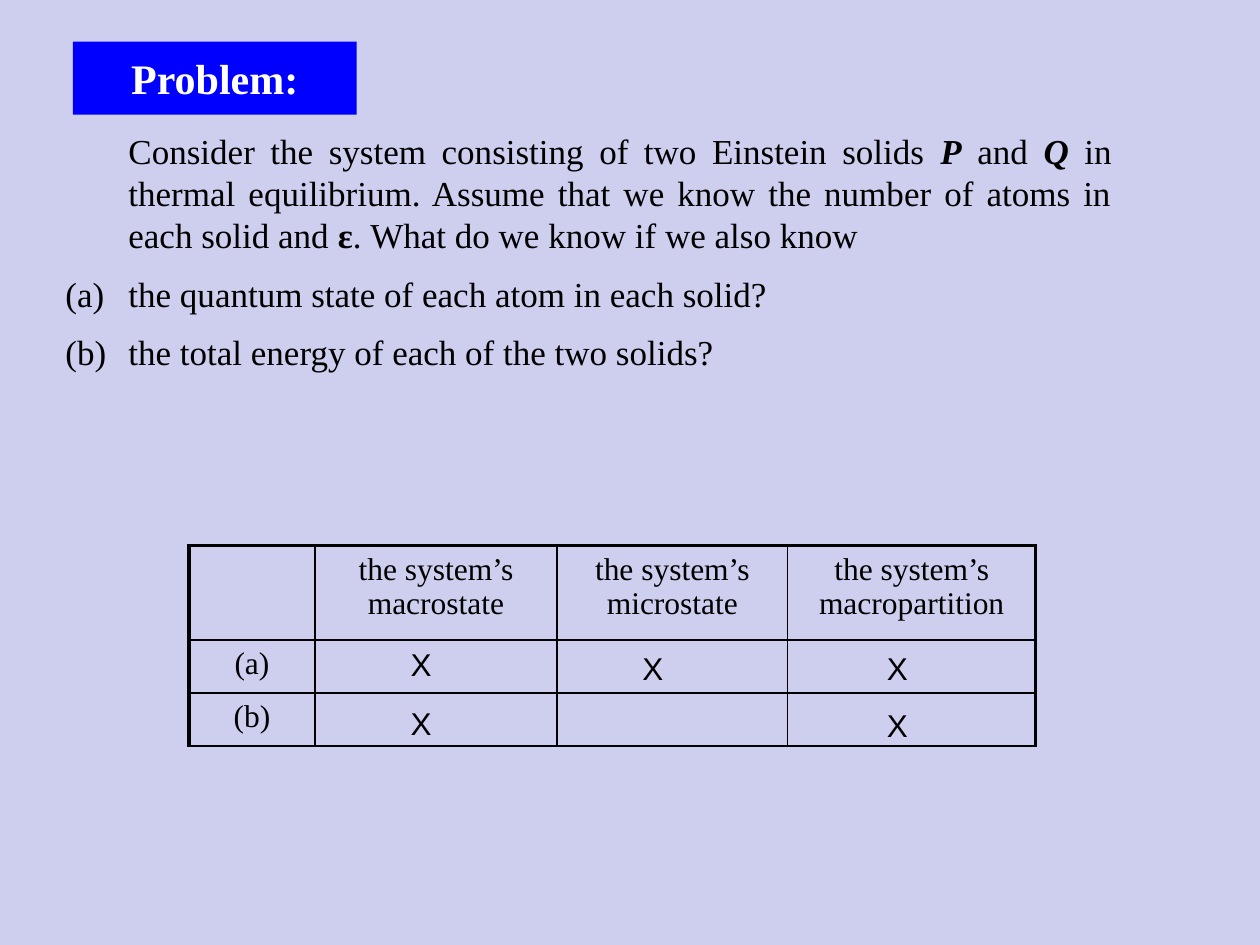
from dataclasses import dataclass

from lxml import etree
from pptx import Presentation
from pptx.dml.color import RGBColor
from pptx.enum.text import MSO_ANCHOR, PP_ALIGN
from pptx.oxml.ns import qn
from pptx.util import Cm, Pt

CENTER, JUSTIFY, LEFT = PP_ALIGN.CENTER, PP_ALIGN.JUSTIFY, PP_ALIGN.LEFT
MIDDLE = MSO_ANCHOR.MIDDLE
TITLE_ONLY = 5


@dataclass(frozen=True)
class Theme:
    background: RGBColor = RGBColor(0xCE, 0xCE, 0xEF)
    banner: RGBColor = RGBColor(0x00, 0x00, 0xFF)
    banner_text: RGBColor = RGBColor(0xFF, 0xFF, 0xFF)
    ink: RGBColor = RGBColor(0x00, 0x00, 0x00)
    serif: str = "Times New Roman"
    sans: str = "Arial"
    title_size: float = 24
    body_size: float = 20
    table_size: float = 18
    outer_line: float = 2.25
    inner_line: float = 1


@dataclass(frozen=True)
class Phrase:
    text: str
    bold: bool = False
    italic: bool = False


@dataclass(frozen=True)
class Mark:
    """Position of one X over the answer grid, in centimetres."""
    left: float
    top: float


THEME = Theme()

INTRO = [
    Phrase("Consider the system consisting of two Einstein solids "),
    Phrase("P", bold=True, italic=True),
    Phrase(" and "),
    Phrase("Q", bold=True, italic=True),
    Phrase(" in thermal equilibrium. Assume that we know the number of atoms"
           " in each solid and "),
    Phrase("ε", bold=True),
    Phrase(". What do we know if we also know"),
]
QUESTIONS = [
    "the quantum state of each atom in each solid?",
    "the total energy of each of the two solids?",
]
ANSWER_GRID = [
    ["", "the system’s macrostate", "the system’s microstate",
     "the system’s macropartition"],
    ["(a)", "", "", ""],
    ["(b)", "", "", ""],
]
COLUMN_WIDTHS = [2.54, 4.88, 4.65, 5.0]
ROW_HEIGHTS = [1.9, 1.07, 1.07]
MARKS = [Mark(8.03, 12.88), Mark(12.7, 12.95), Mark(17.63, 12.95),
         Mark(8.03, 14.07), Mark(17.63, 14.1)]


def style_font(font, size: float, name: str = THEME.serif,
               color: RGBColor = THEME.ink) -> None:
    font.size, font.name = Pt(size), name
    font.color.rgb = color


def add_text_frame(slide, left: float, top: float, width: float, height: float):
    box = slide.shapes.add_textbox(Cm(left), Cm(top), Cm(width), Cm(height))
    box.text_frame.word_wrap = True
    return box.text_frame


def indent(paragraph, hanging: float = 0, numbered: bool = False) -> None:
    properties = paragraph._p.get_or_add_pPr()
    properties.set("marL", str(Cm(1.27)))
    properties.set("indent", str(-Cm(hanging)))
    if numbered:
        etree.SubElement(properties, qn("a:buAutoNum"), type="alphaLcParenBoth")


def set_border(cell, side: str, width: float) -> None:
    line = etree.SubElement(cell._tc.get_or_add_tcPr(), qn(f"a:ln{side}"),
                            w=str(Pt(width)))
    fill = etree.SubElement(line, qn("a:solidFill"))
    etree.SubElement(fill, qn("a:srgbClr"), val=str(THEME.ink))


def add_title(slide) -> None:
    title = slide.shapes.title
    title.left, title.top, title.width, title.height = (
        Cm(1.47), Cm(0.84), Cm(5.72), Cm(1.47))
    title.fill.solid()
    title.fill.fore_color.rgb = THEME.banner
    title.text_frame.text = "Problem:"
    title.text_frame.vertical_anchor = MIDDLE
    heading = title.text_frame.paragraphs[0]
    heading.alignment = CENTER
    font = heading.runs[0].font
    style_font(font, THEME.title_size, color=THEME.banner_text)
    font.bold = True


def add_problem(slide) -> None:
    frame = add_text_frame(slide, 1.07, 2.49, 21.59, 5.99)
    intro = frame.paragraphs[0]
    intro.alignment = JUSTIFY
    indent(intro)
    for phrase in INTRO:
        run = intro.add_run()
        run.text = phrase.text
        style_font(run.font, THEME.body_size)
        run.font.bold, run.font.italic = phrase.bold, phrase.italic
    for text in QUESTIONS:
        question = frame.add_paragraph()
        question.text = text
        question.alignment = JUSTIFY
        question.space_before = Pt(9.5)
        indent(question, hanging=1.27, numbered=True)
        style_font(question.runs[0].font, THEME.body_size)


def add_answer_grid(slide) -> None:
    rows, columns = len(ROW_HEIGHTS), len(COLUMN_WIDTHS)
    grid = slide.shapes.add_table(
        rows, columns, Cm(3.81), Cm(11), Cm(sum(COLUMN_WIDTHS)),
        Cm(sum(ROW_HEIGHTS))).table
    grid.first_row = grid.horz_banding = False
    for column, width in zip(grid.columns, COLUMN_WIDTHS):
        column.width = Cm(width)
    for r, height in enumerate(ROW_HEIGHTS):
        grid.rows[r].height = Cm(height)
        for c, text in enumerate(ANSWER_GRID[r]):
            cell = grid.cell(r, c)
            # The frame is heavy on every side but the bottom
            heavy = {"L": c == 0, "R": c == columns - 1, "T": r == 0, "B": False}
            for side, is_outer in heavy.items():
                set_border(cell, side,
                           THEME.outer_line if is_outer else THEME.inner_line)
            cell.fill.background()
            cell.text_frame.text = text
            label = cell.text_frame.paragraphs[0]
            label.alignment = CENTER
            label.space_before = Pt(3.6)
            style_font(label.font, THEME.table_size)
            for run in label.runs:
                style_font(run.font, THEME.table_size)


def add_mark(slide, mark: Mark) -> None:
    frame = add_text_frame(slide, mark.left, mark.top, 1.7, 1.02)
    frame.text = "X"
    frame.paragraphs[0].alignment = LEFT
    style_font(frame.paragraphs[0].runs[0].font, THEME.table_size, THEME.sans)


def main() -> None:
    deck = Presentation()
    deck.slide_width, deck.slide_height = Cm(25.4), Cm(19.05)
    slide = deck.slides.add_slide(deck.slide_layouts[TITLE_ONLY])
    slide.background.fill.solid()
    slide.background.fill.fore_color.rgb = THEME.background

    # Problem statement
    add_title(slide)
    add_problem(slide)

    # Answer grid with its marks
    add_answer_grid(slide)
    for mark in MARKS:
        add_mark(slide, mark)

    deck.save("out.pptx")


if __name__ == "__main__":
    main()
